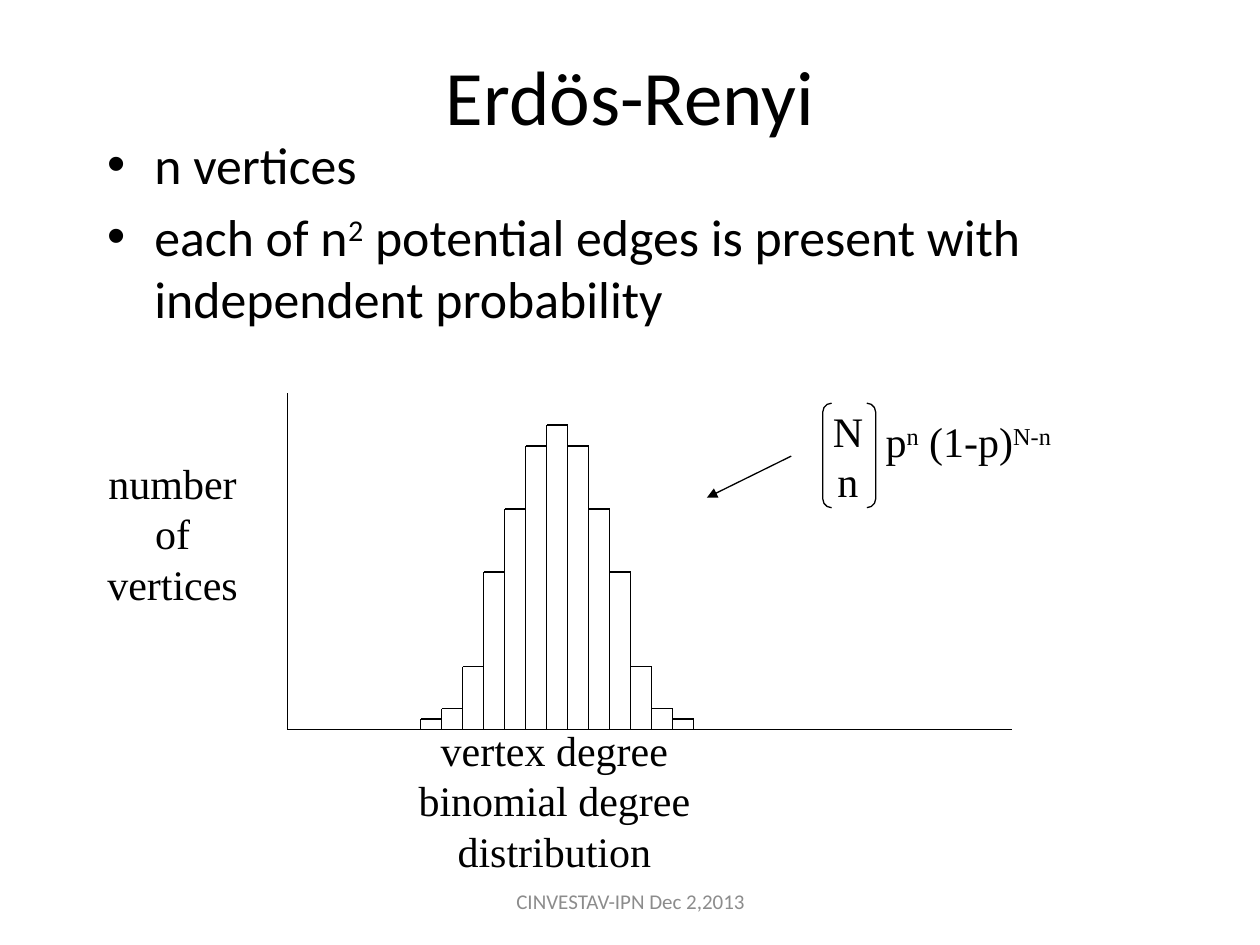
from lxml.etree import SubElement
from pptx import Presentation
from pptx.dml.color import RGBColor
from pptx.enum.shapes import MSO_CONNECTOR, MSO_SHAPE
from pptx.enum.text import MSO_ANCHOR, MSO_AUTO_SIZE, PP_ALIGN
from pptx.oxml.ns import qn
from pptx.util import Inches, Pt

BLACK, GREY = "000000", "8C8C8C"
SERIF, SANS = "Times New Roman", "Calibri"
HALF_HEIGHTS = [1, 2, 6, 15, 21, 27, 29]
HEIGHTS = HALF_HEIGHTS + HALF_HEIGHTS[-2::-1]


def colour(hex_value):
    return RGBColor.from_string(hex_value)


def place(shape, box):
    shape.left, shape.top, shape.width, shape.height = map(Inches, box)


def style(paragraph, font, size, hex_value, align=None):
    paragraph.alignment = align
    for run in paragraph.runs:
        run.font.name = font
        run.font.size = Pt(size)
        run.font.color.rgb = colour(hex_value)


def add_runs(paragraph, pieces):
    for index, piece in enumerate(pieces):
        run = paragraph.add_run()
        run.text = piece
        if index % 2:
            run.font._element.set("baseline", "30000")


def add_label(slide, box, text, align=PP_ALIGN.CENTER, wrap=False,
              font=SERIF, size=24, hex_value=BLACK):
    label = slide.shapes.add_textbox(*map(Inches, box))
    frame = label.text_frame
    frame.word_wrap = wrap
    frame.text = text
    for paragraph in frame.paragraphs:
        style(paragraph, font, size, hex_value, align)
    return frame


def add_line(slide, start, end, arrow=False):
    line = slide.shapes.add_connector(MSO_CONNECTOR.STRAIGHT, *map(Inches, (*start, *end)))
    line.line.color.rgb = colour(BLACK)
    line.line.width = Pt(0.75)
    if arrow:
        SubElement(line.line._get_or_add_ln(), qn("a:tailEnd"), type="triangle")
    SubElement(line._element.spPr, qn("a:effectLst"))


def add_heading(slide, box):
    title = slide.shapes.title
    place(title, box)
    title.text_frame.text = "Erdös-Renyi"
    title.text_frame.vertical_anchor = MSO_ANCHOR.MIDDLE
    style(title.text_frame.paragraphs[0], SANS, 44, BLACK, PP_ALIGN.CENTER)


def add_model_points(slide, box):
    points = slide.placeholders[1]
    place(points, box)
    frame = points.text_frame
    frame.auto_size = MSO_AUTO_SIZE.NONE
    frame.text = "n vertices"
    add_runs(frame.add_paragraph(),
             ["each of n", "2", " potential edges is present with independent probability"])
    for paragraph in frame.paragraphs:
        style(paragraph, SANS, 29.6, BLACK)


def add_histogram(slide, box):
    left, top, width, height = box
    base = top + height
    add_line(slide, (left, top), (left, base))
    add_line(slide, (left, base), (left + width, base))
    bar_width, unit = 1 / 6, 1 / 12
    first = left + 1.06
    for index, bar in enumerate(HEIGHTS):
        x, y = first + index * bar_width, base - bar * unit
        add_line(slide, (x, y), (x + bar_width, y))
    for index, sides in enumerate(zip([0] + HEIGHTS, HEIGHTS + [0])):
        x = first + index * bar_width
        add_line(slide, (x, base - max(sides) * unit), (x, base))
    add_label(slide, (left - 1.53, top + 0.46, 1.24, 1.3), "number\vof\vvertices")
    add_label(slide, (left + 0.17, base - 0.09, 3.9, 1.3),
              "vertex degree\nbinomial degree distribution", wrap=True)


def add_formula(slide, box):
    left, top, width, height = box
    add_line(slide, (left - 0.25, top + 0.42), (left - 0.92, top + 0.75), arrow=True)
    add_label(slide, (left - 0.02, top - 0.03, 0.44, 0.9), "N\nn")
    bracket = slide.shapes.add_shape(
        MSO_SHAPE.DOUBLE_BRACKET, *map(Inches, (left, top, 0.42, height)))
    bracket.adjustments[0] = 0.167
    bracket.shadow.inherit = False
    bracket.fill.background()
    bracket.line.color.rgb = colour(BLACK)
    bracket.line.width = Pt(0.75)
    terms = add_label(slide, (left + 0.4, top + 0.05, width - 0.4, 0.5), "").paragraphs[0]
    add_runs(terms, ["p", "n", " (1-p)", "N-n"])
    style(terms, SERIF, 24, BLACK, PP_ALIGN.LEFT)


def add_footer(slide, box):
    frame = add_label(slide, box, "CINVESTAV-IPN Dec 2,2013", wrap=True,
                      font=SANS, size=12, hex_value=GREY)
    frame.vertical_anchor = MSO_ANCHOR.MIDDLE


def main():
    deck = Presentation()
    deck.slide_width, deck.slide_height = Inches(10), Inches(7.5)
    slide = deck.slides.add_slide(deck.slide_layouts[1])
    add_heading(slide, (0.5, 0, 9, 1.5))
    add_model_points(slide, (0.75, 1, 8.5, 1.5))
    add_histogram(slide, (2.28, 3.12, 5.75, 2.67))
    add_formula(slide, (6.53, 3.2, 1.97, 0.83))
    add_footer(slide, (3.42, 6.95, 3.17, 0.4))
    deck.save("out.pptx")


if __name__ == "__main__":
    main()
